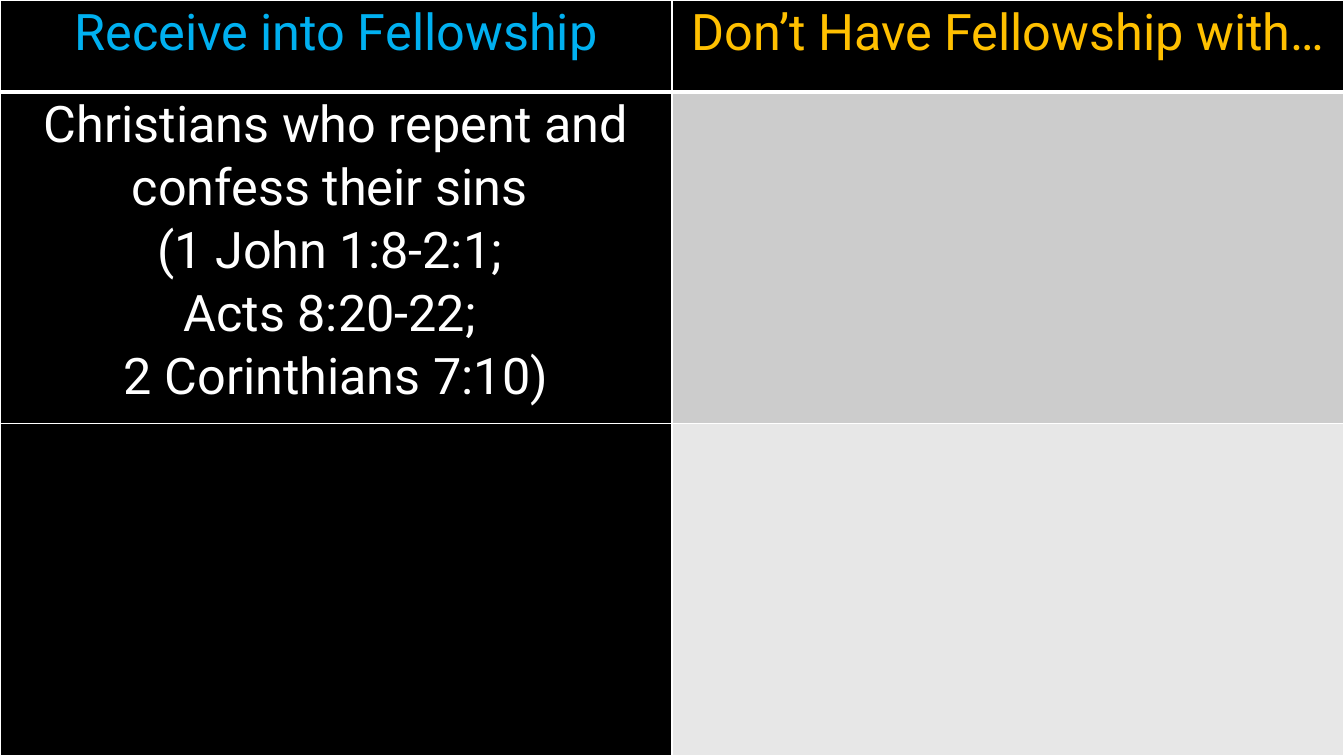
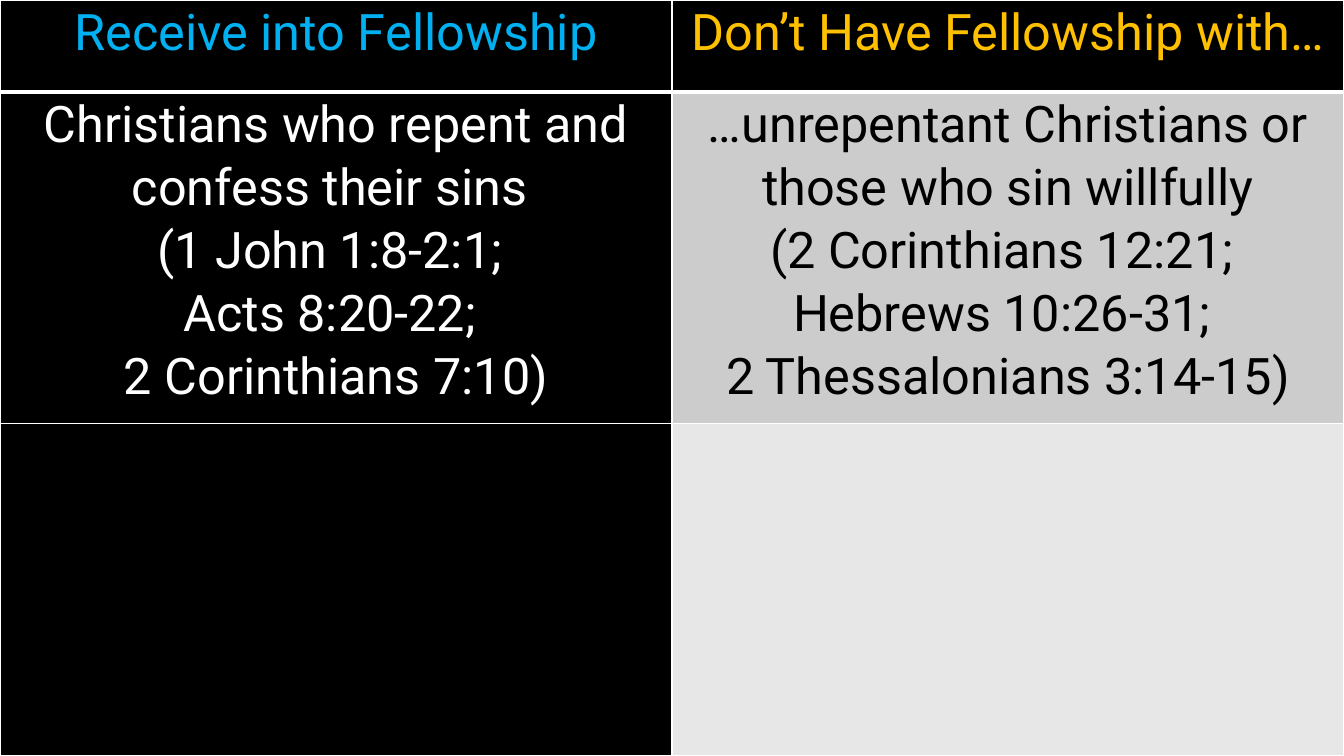
from lxml.etree import SubElement
from pptx import Presentation
from pptx.dml.color import RGBColor
from pptx.enum.text import PP_ALIGN as Align
from pptx.oxml.ns import qn
from pptx.util import Cm, Pt

SLIDE_WIDTH, SLIDE_HEIGHT = Cm(33.87), Cm(19.05)
HEADER_HEIGHT = Cm(2.31)
FONT, FONT_SIZE, LINE_SPACING = "Roboto", Pt(36), 1.07
SIDE_MARGIN = Cm(0.18)
THIN, THICK = Pt(1), Pt(3)

BLACK, WHITE = "000000", "FFFFFF"
BLUE, GOLD = "00B0F0", "FFC000"
GREY, LIGHT_GREY = "CCCCCC", "E7E7E7"

FILLS = [(BLACK, BLACK), (BLACK, GREY), (BLACK, LIGHT_GREY)]
TEXT_COLOURS = [(BLUE, GOLD), (WHITE, BLACK), (WHITE, BLACK)]

HEADINGS = ("Receive into Fellowship", "Don’t Have Fellowship with…")
RECEIVE = "\n".join([
    "Christians who repent and confess their sins ",
    "(1 John 1:8-2:1; ",
    "Acts 8:20-22; ",
    "2 Corinthians 7:10)",
])
REFUSE = "\n".join([
    "…unrepentant Christians or those who sin willfully",
    "(2 Corinthians 12:21; ",
    "Hebrews 10:26-31; ",
    "2 Thessalonians 3:14-15)",
])
SLIDES = [
    [HEADINGS, (RECEIVE, ""), ("", "")],
    [HEADINGS, (RECEIVE, REFUSE), ("", "")],
]


def paint(colour_format, colour):
    colour_format.rgb = RGBColor.from_string(colour)


def fill_solid(fill, colour):
    fill.solid()
    paint(fill.fore_color, colour)


def set_borders(cell, top, bottom):
    """Draw white cell borders; call before filling, as the schema puts lines first."""
    properties = cell._tc.get_or_add_tcPr()
    widths = {"a:lnL": THIN, "a:lnR": THIN, "a:lnT": top, "a:lnB": bottom}
    for tag, width in widths.items():
        line = SubElement(properties, qn(tag), w=str(width))
        solid = SubElement(line, qn("a:solidFill"))
        SubElement(solid, qn("a:srgbClr"), val=WHITE)


def write_cell(cell, text, colour):
    cell.margin_left = cell.margin_right = SIDE_MARGIN
    cell.margin_top = cell.margin_bottom = 0
    cell.text_frame.text = text
    for para in cell.text_frame.paragraphs:
        para.alignment = Align.CENTER
        para.line_spacing = LINE_SPACING
        for span in para.runs:
            span.font.name = FONT
            span.font.size = FONT_SIZE
            span.font.bold = False
            paint(span.font.color, colour)


def add_comparison(page, texts, left, top, width, height):
    row_count, column_count = len(texts), len(texts[0])
    table = page.shapes.add_table(
        row_count, column_count, left, top, width, height).table
    for column in table.columns:
        column.width = width // column_count
    body_height = (height - HEADER_HEIGHT) // (row_count - 1)
    for r, row in enumerate(table.rows):
        row.height = body_height if r else HEADER_HEIGHT
        for c, cell in enumerate(row.cells):
            set_borders(cell, top=THICK if r == 1 else THIN,
                        bottom=THICK if r == 0 else THIN)
            fill_solid(cell.fill, FILLS[r][c])
            write_cell(cell, texts[r][c], TEXT_COLOURS[r][c])


def main():
    deck = Presentation()
    deck.slide_width, deck.slide_height = SLIDE_WIDTH, SLIDE_HEIGHT
    blank = deck.slide_layouts[6]
    for texts in SLIDES:
        page = deck.slides.add_slide(blank)
        fill_solid(page.background.fill, BLACK)
        add_comparison(page, texts, 0, 0, SLIDE_WIDTH, SLIDE_HEIGHT)
    deck.save("out.pptx")


if __name__ == "__main__":
    main()
